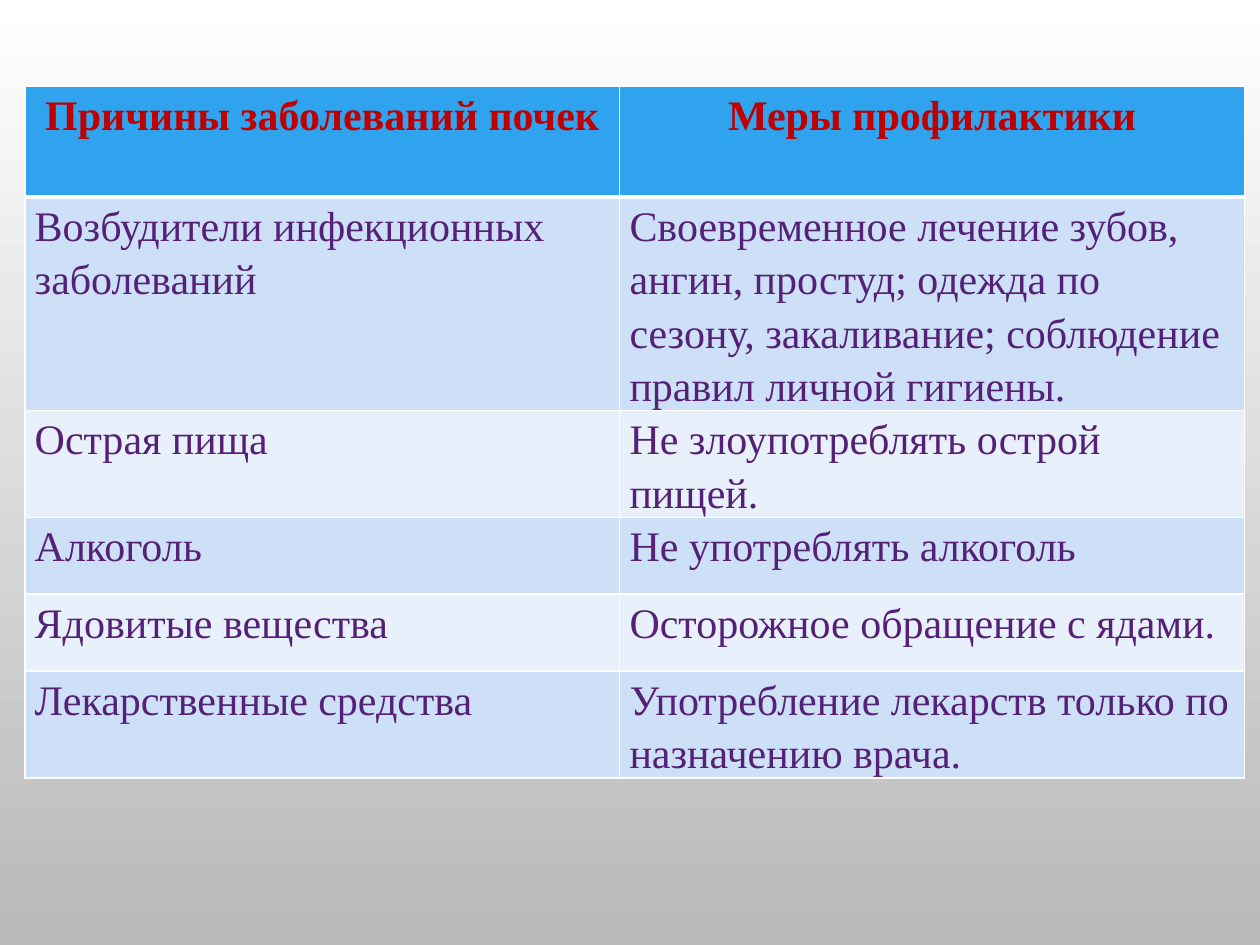
from lxml import etree
from pptx import Presentation
from pptx import util as u
from pptx.dml import color as c
from pptx.enum import text
from pptx.oxml import ns

COLORS = {
    "top": "FFFFFF",
    "bottom": "B9B9B9",
    "border": "FFFFFF",
    "header": "2FA3EE",
    "header_text": "C00000",
    "body_text": "542176",
    "odd_row": "CDE0F8",
    "even_row": "E8F0FC",
}
ROWS = [
    (2.24, "Причины заболеваний почек", "Меры профилактики"),
    (3.89, "Возбудители инфекционных заболеваний",
     "Своевременное лечение зубов, ангин, простуд; одежда по сезону, "
     "закаливание; соблюдение правил личной гигиены."),
    (1.93, "Острая пища", "Не злоупотреблять острой пищей."),
    (1.55, "Алкоголь", "Не употреблять алкоголь"),
    (1.55, "Ядовитые вещества", "Осторожное обращение с ядами."),
    (2.06, "Лекарственные средства", "Употребление лекарств только по назначению врача."),
]
COLUMN_WIDTHS = [11.99, 12.6]


def rgb(name):
    return c.RGBColor.from_string(COLORS[name])


def add_borders(cell, bottom_width):
    properties = cell._tc.get_or_add_tcPr()
    for index, side in enumerate("LRTB"):
        width = bottom_width if side == "B" else 1
        line = etree.Element(ns.qn(f"a:ln{side}"), w=str(u.Pt(width)))
        fill = etree.SubElement(line, ns.qn("a:solidFill"))
        etree.SubElement(fill, ns.qn("a:srgbClr"), val=COLORS["border"])
        properties.insert(index, line)


presentation = Presentation()
presentation.slide_width = u.Cm(25.4)
presentation.slide_height = u.Cm(19.05)
slide = presentation.slides.add_slide(presentation.slide_layouts[6])

background = slide.background.fill
background.gradient()
background.gradient_angle = 270
for stop, name in zip(background.gradient_stops, ("top", "bottom")):
    stop.color.rgb = rgb(name)

table = slide.shapes.add_table(
    len(ROWS), len(COLUMN_WIDTHS), u.Cm(0.5), u.Cm(1.73),
    u.Cm(sum(COLUMN_WIDTHS)), u.Cm(sum(row[0] for row in ROWS))
).table
for column, width in zip(table.columns, COLUMN_WIDTHS):
    column.width = u.Cm(width)

for row_index, (height, *labels) in enumerate(ROWS):
    table.rows[row_index].height = u.Cm(height)
    is_header = row_index == 0
    fill_name = "header" if is_header else "odd_row" if row_index % 2 else "even_row"
    for column_index, label in enumerate(labels):
        cell = table.cell(row_index, column_index)
        cell.fill.solid()
        cell.fill.fore_color.rgb = rgb(fill_name)
        cell.margin_left = cell.margin_right = u.Cm(0.2)
        cell.margin_top = cell.margin_bottom = 0
        add_borders(cell, 3 if is_header else 1)
        paragraph = cell.text_frame.paragraphs[0]
        paragraph.alignment = text.PP_ALIGN.CENTER if is_header else text.PP_ALIGN.LEFT
        paragraph.line_spacing = 1.15
        run = paragraph.add_run()
        run.text = label
        run.font.name = "Times New Roman"
        run.font.size = u.Pt(24)
        run.font.bold = is_header
        run.font.color.rgb = rgb("header_text" if is_header else "body_text")

presentation.save("out.pptx")
